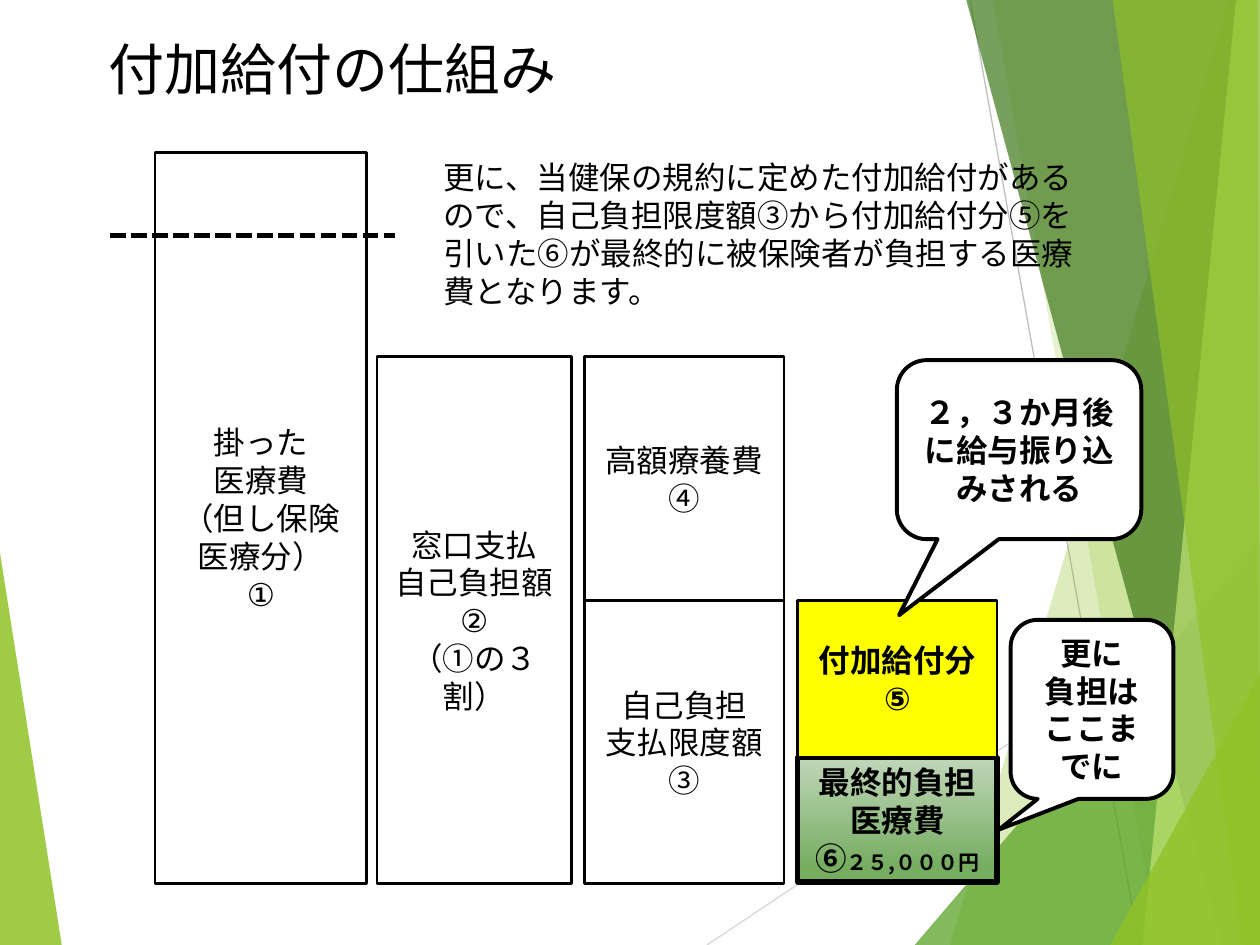
from lxml.etree import SubElement
from pptx import Presentation
from pptx.dml.color import RGBColor
from pptx.enum.dml import MSO_LINE
from pptx.enum.shapes import MSO_CONNECTOR, MSO_SHAPE
from pptx.enum.text import MSO_ANCHOR, MSO_AUTO_SIZE, PP_ALIGN
from pptx.oxml.ns import qn
from pptx.util import Pt

BLACK = RGBColor(0x00, 0x00, 0x00)
WHITE = RGBColor(0xFF, 0xFF, 0xFF)
YELLOW = RGBColor(0xFF, 0xFF, 0x00)
PALE_GREEN = RGBColor(0xC0, 0xD6, 0xB9)
SOFT_GREEN = RGBColor(0x76, 0xAD, 0x61)
LIME = RGBColor(0x90, 0xC2, 0x26)
GREEN = RGBColor(0x54, 0xA0, 0x21)
DARK_GREEN = RGBColor(0x3F, 0x78, 0x19)
LIGHT_LIME = RGBColor(0xC0, 0xE4, 0x74)
LIGHT_GRAY = RGBColor(0xD9, 0xD9, 0xD9)
GRAY = RGBColor(0xBF, 0xBF, 0xBF)

KARLA = "Karla"
NOTO = "Noto Sans CJK JP"
WIDTH, HEIGHT = 720, 540

# Bars share one bottom edge; the upper edges are levels of cost.
BOTTOM = 505
TOTAL_TOP, COPAY_TOP, LIMIT_TOP, FINAL_TOP = 87, 203.7, 343.3, 433

FACETS = [
    ([(0, 316), (35.3, HEIGHT), (0, HEIGHT)], LIME, 85),
    ([(702, 0), (543, HEIGHT), (WIDTH, HEIGHT), (WIDTH, 0)], LIME, 30),
    ([(567.4, 0), (661.7, HEIGHT), (WIDTH, HEIGHT), (WIDTH, 0)], LIME, 20),
    ([(522.7, HEIGHT), (WIDTH, 309), (WIDTH, HEIGHT)], GREEN, 72),
    ([(552.2, 0), (698.4, HEIGHT), (WIDTH, HEIGHT), (WIDTH, 0)], DARK_GREEN, 70),
    ([(706.3, 0), (653, HEIGHT), (WIDTH, HEIGHT), (WIDTH, 0)], LIGHT_LIME, 70),
    ([(635.8, 0), (710, HEIGHT), (WIDTH, HEIGHT), (718.6, 0)], LIME, 65),
    ([(634.3, HEIGHT), (WIDTH, 385.2), (WIDTH, HEIGHT)], LIME, 80),
]


def add_facet(slide, points, color, opacity):
    """Draw a translucent polygon of the background."""
    corners = [(Pt(x), Pt(y)) for x, y in points]
    builder = slide.shapes.build_freeform(*corners[0], scale=1.0)
    builder.add_line_segments(corners[1:], close=True)
    shape = builder.convert_to_shape()
    shape.shadow.inherit = False
    shape.fill.solid()
    shape.fill.fore_color.rgb = color
    shape.line.fill.background()
    color_element = shape.fill._xPr.find(qn("a:solidFill"))[0]
    SubElement(color_element, qn("a:alpha")).set("val", str(opacity * 1000))


def add_line(slide, start, end, color, width, dash=None):
    connector = slide.shapes.add_connector(
        MSO_CONNECTOR.STRAIGHT, *map(Pt, start), *map(Pt, end))
    connector.line.color.rgb = color
    connector.line.width = Pt(width)
    if dash:
        connector.line.dash_style = dash
    SubElement(connector._element.spPr, qn("a:effectLst"))


def add_runs(text_frame, lines, font_name, size=18, bold=False, align=None):
    """Write one paragraph per line; a line is a list of texts or (text, size)."""
    text_frame.word_wrap = True
    for index, line in enumerate(lines):
        paragraph = text_frame.paragraphs[0] if index == 0 else text_frame.add_paragraph()
        paragraph.alignment = align
        for part in line:
            text, run_size = part if isinstance(part, tuple) else (part, size)
            run = paragraph.add_run()
            run.text = text
            run.font.name = font_name
            run.font.size = Pt(run_size)
            run.font.bold = bold
            run.font.color.rgb = BLACK
            SubElement(run.font._element, qn("a:ea")).set("typeface", font_name)


def add_text(slide, box, text, size):
    text_box = slide.shapes.add_textbox(*map(Pt, box))
    add_runs(text_box.text_frame, [[text]], NOTO, size)
    text_box.text_frame.auto_size = MSO_AUTO_SIZE.SHAPE_TO_FIT_TEXT


def add_box(slide, kind, box, lines, font_name=KARLA, bold=False, fill=WHITE, line_width=1.5):
    shape = slide.shapes.add_shape(kind, *map(Pt, box))
    shape.shadow.inherit = False
    shape.fill.solid()
    shape.fill.fore_color.rgb = fill
    shape.line.color.rgb = BLACK
    shape.line.width = Pt(line_width)
    shape.text_frame.vertical_anchor = MSO_ANCHOR.MIDDLE
    add_runs(shape.text_frame, lines, font_name, bold=bold, align=PP_ALIGN.CENTER)
    return shape


def add_bar(slide, left, width, top, bottom, lines, **style):
    return add_box(slide, MSO_SHAPE.RECTANGLE, (left, top, width, bottom - top), lines, **style)


def add_callout(slide, box, tip, lines):
    """Add a speech bubble whose tip is an offset from its centre, in box sizes."""
    shape = add_box(slide, MSO_SHAPE.ROUNDED_RECTANGULAR_CALLOUT, box, lines,
                    font_name=NOTO, bold=True, line_width=2.25)
    shape.adjustments[0], shape.adjustments[1] = tip


def add_background(slide):
    add_line(slide, (404, HEIGHT), (WIDTH, 329), LIGHT_GRAY, 0.75)
    add_line(slide, (554.4, 0), (651, HEIGHT), GRAY, 0.75)
    for points, color, opacity in FACETS:
        add_facet(slide, points, color, opacity)


def add_bars(slide):
    add_bar(slide, 88.6, 121, TOTAL_TOP, BOTTOM,
            [["掛った"], ["医療費"], ["（但し保険医療分）"], ["①"]])
    add_bar(slide, 215.5, 111, COPAY_TOP, BOTTOM,
            [["窓口支払"], ["自己負担額"], ["②"], ["（①の３割）"]])
    add_bar(slide, 334, 114, LIMIT_TOP, BOTTOM, [["自己負担"], ["支払限度額③"]])
    add_bar(slide, 334, 114, COPAY_TOP, LIMIT_TOP, [["高額療養費④"]])
    final = add_bar(slide, 455.8, 114, FINAL_TOP, BOTTOM - 1,
                    [["最終的負担"], ["医療費"], ["⑥", ("２５,０００円", 12)]],
                    font_name=NOTO, bold=True, line_width=3)
    final.text_frame.margin_left = final.text_frame.margin_right = Pt(5)
    final.fill.gradient()
    final.fill.gradient_angle = 270
    stops = final.fill.gradient_stops
    for stop, position, color in zip(stops, (0, 0.88), (PALE_GREEN, SOFT_GREEN)):
        stop.position = position
        stop.color.rgb = color
    add_bar(slide, 455.8, 114, LIMIT_TOP, FINAL_TOP, [["付加給付分"], ["⑤"]],
            bold=True, fill=YELLOW)


def main():
    presentation = Presentation()
    presentation.slide_width, presentation.slide_height = Pt(WIDTH), Pt(HEIGHT)
    slide = presentation.slides.add_slide(presentation.slide_layouts[6])
    add_background(slide)
    add_text(slide, (54.7, 16, 510.5, 46), "付加給付の仕組み", 32)
    add_text(slide, (246.3, 87, 381.6, 94.5),
             "更に、当健保の規約に定めた付加給付があるので、自己負担限度額③から"
             "付加給付分⑤を引いた⑥が最終的に被保険者が負担する医療費となります。", 18)
    add_bars(slide)
    add_callout(slide, (577.5, 354.2, 93, 102.3), (-0.573, 0.672),
                [["更に"], ["負担はここまでに"]])
    add_line(slide, (63, 134.6), (225.5, 134.6), BLACK, 3, MSO_LINE.SQUARE_DOT)
    add_callout(slide, (512.5, 205.8, 139.7, 102.3), (-0.491, 0.925),
                [["２，３か月後に給与振り込みされる"]])
    presentation.save("out.pptx")


if __name__ == "__main__":
    main()
